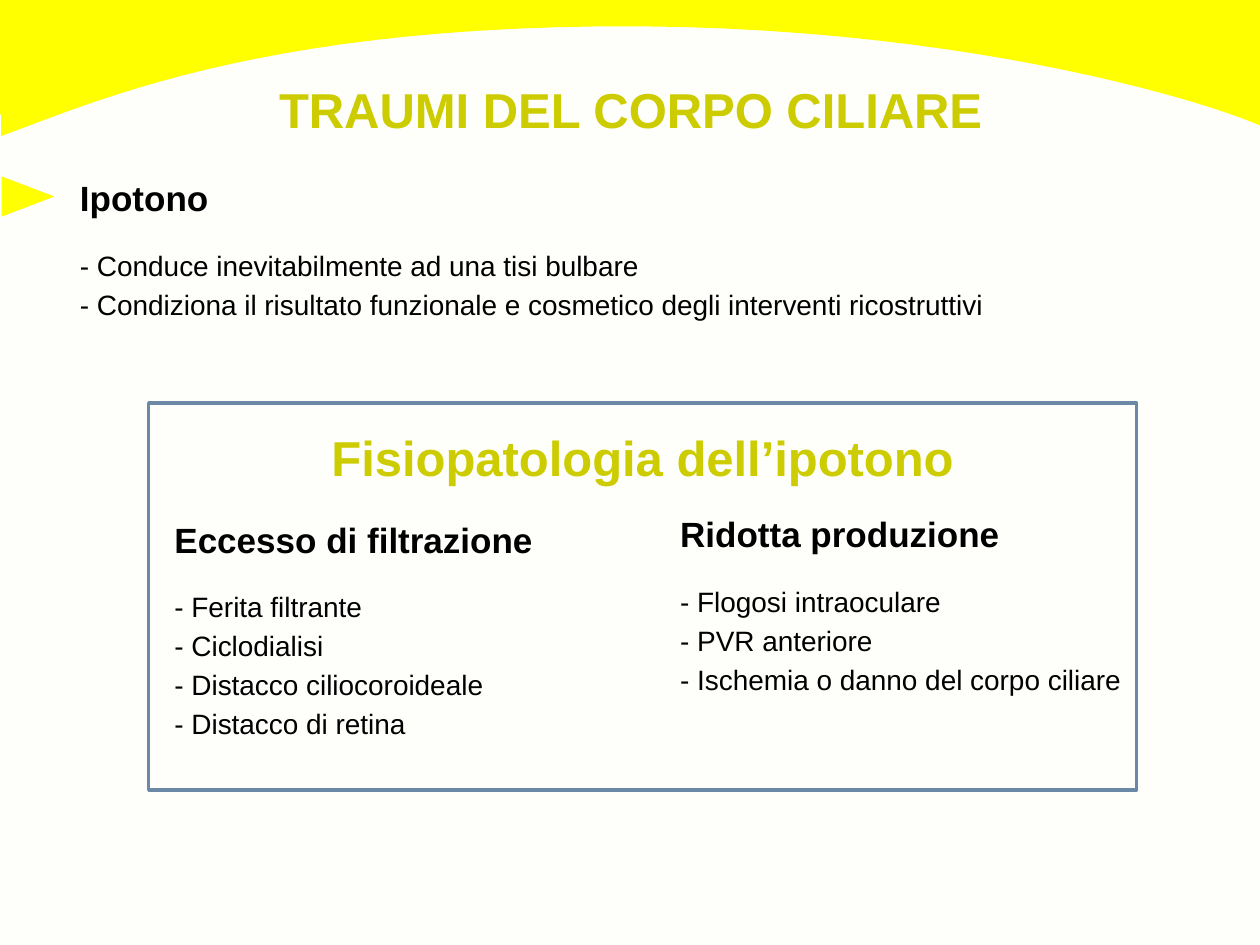
from pptx import Presentation
from pptx.dml.color import RGBColor
from pptx.enum.shapes import MSO_SHAPE
from pptx.enum.text import MSO_AUTO_SIZE, PP_ALIGN
from pptx.util import Pt

RECTANGLE = MSO_SHAPE.RECTANGLE
TRIANGLE = MSO_SHAPE.ISOSCELES_TRIANGLE
CENTER = PP_ALIGN.CENTER
FIT_SHAPE = MSO_AUTO_SIZE.SHAPE_TO_FIT_TEXT

IVORY = RGBColor(0xFE, 0xFF, 0xFB)
YELLOW = RGBColor(0xFF, 0xFF, 0x00)
OLIVE = RGBColor(0xCC, 0xCC, 0x00)
BLACK = RGBColor(0x00, 0x00, 0x00)
STEEL = RGBColor(0x6C, 0x88, 0xA7)

FONT = "Arial"
CURVE_STEPS = 24


def curve_points(start, first, second, end):
    """Return points along a cubic curve, without its start."""
    points = []
    for step in range(1, CURVE_STEPS + 1):
        t = step / CURVE_STEPS
        weights = ((1 - t) ** 3, 3 * t * (1 - t) ** 2, 3 * t * t * (1 - t), t ** 3)
        corners = (start, first, second, end)
        points.append(tuple(sum(w * c[axis] for w, c in zip(weights, corners))
                            for axis in (0, 1)))
    return points


class SlidePainter:
    """Draws styled elements on the current slide, measured in points."""

    def __init__(self, page):
        self.page = page
        page.background.fill.solid()
        page.background.fill.fore_color.rgb = IVORY

    def style(self, shape, fill=None, line=None):
        shape.shadow.inherit = False
        if fill is None:
            shape.fill.background()
        else:
            shape.fill.solid()
            shape.fill.fore_color.rgb = fill
        if line is None:
            shape.line.fill.background()
        else:
            shape.line.color.rgb = line
            shape.line.width = Pt(2)

    def sweep(self, nodes, top):
        points = [nodes[0]]
        for index in range(0, len(nodes) - 1, 3):
            points += curve_points(*nodes[index:index + 4])
        points += [(720, top), (nodes[0][0], top)]
        start, *rest = [(Pt(x), Pt(y)) for x, y in points]
        builder = self.page.shapes.build_freeform(*start)
        builder.add_line_segments(rest, close=True)
        self.style(builder.convert_to_shape(), fill=YELLOW)

    def shape(self, kind, left, top, width, height, fill=None, line=None, rotation=0):
        shape = self.page.shapes.add_shape(kind, Pt(left), Pt(top), Pt(width), Pt(height))
        shape.rotation = rotation
        self.style(shape, fill, line)

    def text_frame(self, left, top, width, height):
        box = self.page.shapes.add_textbox(Pt(left), Pt(top), Pt(width), Pt(height))
        box.text_frame.word_wrap = True
        return box.text_frame

    def set_text(self, para, text, size, color, bold=False):
        para.text = text
        para.font.name = FONT
        para.font.size = Pt(size)
        para.font.bold = bold
        para.font.color.rgb = color

    def title(self, text, left, top, width):
        frame = self.text_frame(left, top, width, 41)
        frame.auto_size = FIT_SHAPE
        para = frame.paragraphs[0]
        para.alignment = CENTER
        self.set_text(para, text, 28, OLIVE, bold=True)

    def topic(self, heading, items, left, top, width):
        frame = self.text_frame(left, top, width, 196.5)
        para = frame.paragraphs[0]
        para.line_spacing = 0.9
        para.space_before = Pt(5)
        self.set_text(para, heading, 20, BLACK, bold=True)
        for index, item in enumerate(items):
            para = frame.add_paragraph()
            para.line_spacing = 0.9
            para.space_before = Pt(5 if index else 19)
            self.set_text(para, f"- {item}", 16, BLACK)


def main():
    deck = Presentation()
    deck.slide_width, deck.slide_height = Pt(720), Pt(540)
    painter = SlidePainter(deck.slides.add_slide(deck.slide_layouts[6]))

    painter.sweep([(0.72, 77.76), (54, 58.3), (144, 17.3), (342, 15.1),
                   (540.7, 13), (684.7, 56.2), (720.72, 72)], top=2.16)
    painter.sweep([(0, 65.5), (70.6, 36.7), (189.4, 8.6), (353.5, 10.8),
                   (517.7, 13), (655.9, 36.7), (719.3, 62.6)], top=0)

    painter.title("TRAUMI DEL CORPO CILIARE", 0.72, 41.76, 719.28)
    painter.topic("Ipotono", [
        "Conduce inevitabilmente ad una tisi bulbare",
        "Condiziona il risultato funzionale e cosmetico degli interventi ricostruttivi",
    ], 38.6, 100.1, 630)
    painter.shape(TRIANGLE, 4.5, 97.2, 23, 30.2, fill=YELLOW, rotation=90)

    painter.title("Fisiopatologia dell’ipotono", 85, 240.5, 564.5)
    painter.topic("Eccesso di filtrazione", [
        "Ferita filtrante",
        "Ciclodialisi",
        "Distacco ciliocoroideale",
        "Distacco di retina",
    ], 92.6, 295.2, 261)
    painter.topic("Ridotta produzione", [
        "Flogosi intraoculare",
        "PVR anteriore",
        "Ischemia o danno del corpo ciliare",
    ], 381.6, 292.3, 268)
    painter.shape(RECTANGLE, 85, 230.4, 564.5, 221, line=STEEL)

    deck.save("out.pptx")


if __name__ == "__main__":
    main()
